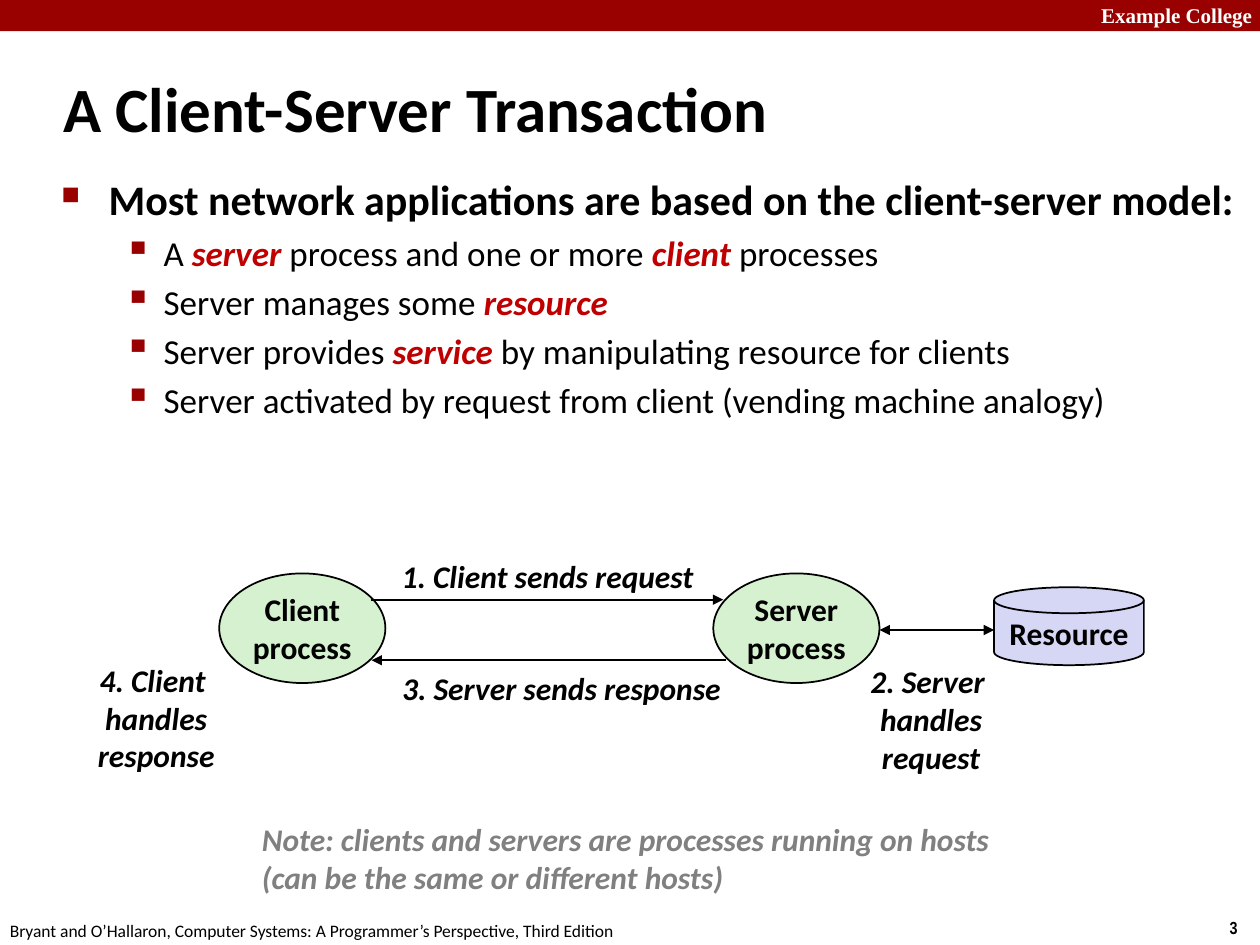
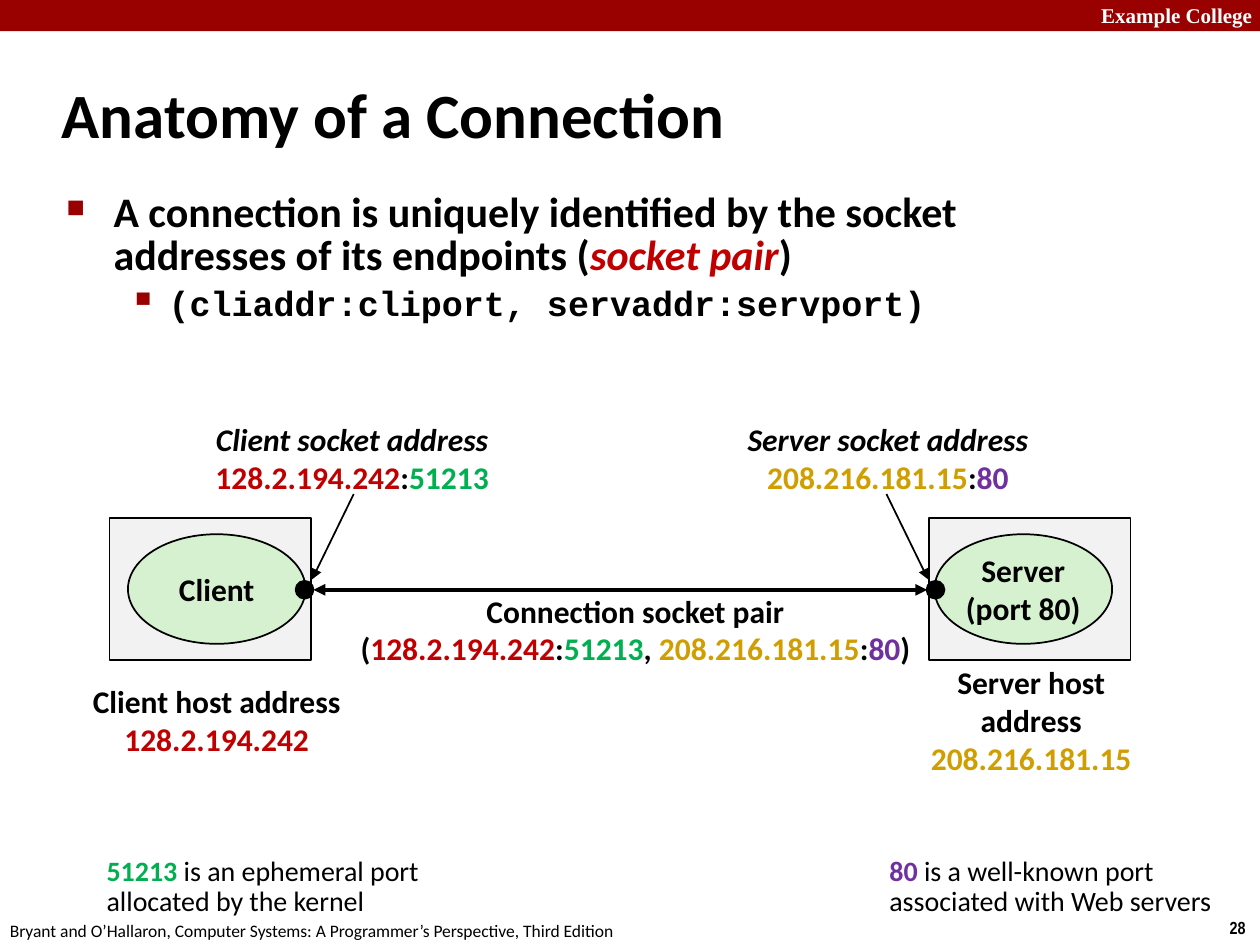
from dataclasses import dataclass

from lxml import etree
from pptx import Presentation
from pptx.dml.color import RGBColor
from pptx.enum.shapes import MSO_CONNECTOR, MSO_SHAPE
from pptx.enum.text import MSO_ANCHOR, PP_ALIGN
from pptx.oxml.ns import qn
from pptx.util import Cm, Pt

RECT, OVAL = MSO_SHAPE.RECTANGLE, MSO_SHAPE.OVAL
DISK = MSO_SHAPE.FLOWCHART_MAGNETIC_DISK
STRAIGHT = MSO_CONNECTOR.STRAIGHT
TOP, MIDDLE = MSO_ANCHOR.TOP, MSO_ANCHOR.MIDDLE
LEFT, CENTER = PP_ALIGN.LEFT, PP_ALIGN.CENTER
TITLE_ONLY = 5


@dataclass(frozen=True)
class Theme:
    band: str = "990000"
    ink: str = "000000"
    paper: str = "FFFFFF"
    accent: str = "C00000"
    note: str = "808080"
    process: str = "D5F1CF"
    resource: str = "D6D6F5"
    host: str = "F2F2F2"
    client_port: str = "00B050"
    server_ip: str = "D09E00"
    server_port: str = "7030A0"
    font: str = "Calibri"
    code_font: str = "Courier New"
    band_font: str = "Times New Roman"
    number_font: str = "Arial Narrow"
    title: int = 36
    point: int = 24
    subpoint: int = 20
    label: int = 18
    remark: int = 16
    band_size: int = 12
    footer: int = 10


T = Theme()
FOOTER = ("Bryant and O’Hallaron, Computer Systems: "
          "A Programmer’s Perspective, Third Edition")
# Bullet levels: character, size in percent, left margin, hanging indent, type size
BULLETS = (("■", 60, 0.95, 0.95, T.point), ("▪", 110, 2.06, 0.8, T.subpoint))

CLIENT_IP = ("128.2.194.242", {"color": T.accent})
CLIENT_PORT = ("51213", {"color": T.client_port})
SERVER_IP = ("208.216.181.15", {"color": T.server_ip})
SERVER_PORT = ("80", {"color": T.server_port})
CLIENT_SOCKET = [CLIENT_IP, ":", CLIENT_PORT]
SERVER_SOCKET = [SERVER_IP, ":", SERVER_PORT]


def cm(*lengths):
    return [Cm(v) for v in lengths]


def rgb(color):
    return RGBColor.from_string(color)


def key(text):
    """Run spec for an emphasised term."""
    return text, {"color": T.accent, "bold": True, "italic": True}


def add_runs(p, runs, **base):
    """Add runs to p; a run is a string or (string, style overrides)."""
    for run in [runs] if isinstance(runs, str) else runs:
        text, own = (run, {}) if isinstance(run, str) else run
        style = {"font": T.font, "size": T.label, "color": T.ink,
                 "bold": False, "italic": False, **base, **own}
        r = p.add_run()
        r.text = text
        r.font.name = style["font"]
        r.font.size = Pt(style["size"])
        r.font.bold = style["bold"]
        r.font.italic = style["italic"]
        r.font.color.rgb = rgb(style["color"])


def write(tf, paragraphs, align=LEFT, anchor=TOP, wrap=False, spacing=None, **style):
    tf.word_wrap = wrap
    tf.vertical_anchor = anchor
    for i, runs in enumerate(paragraphs):
        p = tf.add_paragraph() if i else tf.paragraphs[0]
        p.alignment = align
        if spacing:
            p.line_spacing = spacing
        add_runs(p, runs, **style)


def add_text(s, at, paragraphs, **style):
    write(s.shapes.add_textbox(*cm(*at)).text_frame, paragraphs, **style)


def add_label(s, at, paragraphs, **style):
    add_text(s, at, paragraphs, align=CENTER, anchor=MIDDLE, bold=True, **style)


def add_block(s, kind, at, fill, lines=(), outline=True):
    sp = s.shapes.add_shape(kind, *cm(*at))
    sp.shadow.inherit = False
    sp.fill.solid()
    sp.fill.fore_color.rgb = rgb(fill)
    if outline:
        sp.line.color.rgb = rgb(T.ink)
        sp.line.width = Pt(1)
    else:
        sp.line.fill.background()
    if lines:
        write(sp.text_frame, lines, align=CENTER, anchor=MIDDLE, bold=True)


def add_arrow(s, start, end, width=1, double=False):
    c = s.shapes.add_connector(STRAIGHT, *cm(*start, *end))
    c.line.color.rgb = rgb(T.ink)
    c.line.width = Pt(width)
    ln = c.line._get_or_add_ln()
    for tag in ("a:headEnd", "a:tailEnd") if double else ("a:tailEnd",):
        etree.SubElement(ln, qn(tag), type="triangle")
    etree.SubElement(c._element.spPr, qn("a:effectLst"))


def add_bullet(p, level):
    char, percent, margin, hanging, size = BULLETS[level]
    p.level = level
    p.space_before = Pt(round(size * 0.2))
    pPr = p._p.get_or_add_pPr()
    pPr.set("marL", str(Cm(margin)))
    pPr.set("indent", str(-Cm(hanging)))
    color = etree.SubElement(pPr, qn("a:buClr"))
    etree.SubElement(color, qn("a:srgbClr"), val=T.band)
    etree.SubElement(pPr, qn("a:buSzPct"), val=str(percent * 1000))
    etree.SubElement(pPr, qn("a:buChar"), char=char)


def add_bullets(s, at, items):
    """Add a bulleted body; an item is (level, line spacing, runs, style)."""
    tf = s.shapes.add_textbox(*cm(*at)).text_frame
    tf.word_wrap = True
    for i, (level, spacing, runs, style) in enumerate(items):
        p = tf.add_paragraph() if i else tf.paragraphs[0]
        p.line_spacing = spacing
        add_bullet(p, level)
        add_runs(p, runs, size=BULLETS[level][-1], **style)


def add_slide(prs, title, title_at, number):
    """Start a slide with its title, top band, footer and page number."""
    s = prs.slides.add_slide(prs.slide_layouts[TITLE_ONLY])
    add_block(s, RECT, (0, 0, 25.4, 0.63), T.band, outline=False)
    add_text(s, (21.95, -0.08, 3.63, 0.76), ["Example College"], wrap=True,
             font=T.band_font, size=T.band_size, color=T.paper, bold=True)
    add_text(s, (24.54, 18.36, 0.86, 0.69), [number],
             font=T.number_font, size=T.footer, bold=True)
    add_text(s, (-0.05, 18.42, 12.9, 0.69), [FOOTER], size=T.footer)
    ph = s.shapes.title
    ph.left, ph.top, ph.width, ph.height = cm(*title_at)
    write(ph.text_frame, [title], anchor=MIDDLE, wrap=True, size=T.title, bold=True)
    return s


def build_transaction(prs):
    s = add_slide(prs, "A Client-Server Transaction", (1.02, 1.37, 19.89, 1.6), "3")
    details = (
        ["A ", key("server"), " process and one or more ", key("client "), "processes"],
        ["Server manages some ", key("resource")],
        ["Server provides ", key("service"), " by manipulating resource for clients"],
        "Server activated by request from client (vending machine analogy)",
    )
    add_bullets(s, (0.99, 3.38, 24.18, 5.72), [
        (0, 1.0, "Most network applications are based on the client-server model:",
         {"bold": True}),
        *((1, 1.0, runs, {}) for runs in details),
    ])

    for x, role in ((4.42, "Client"), (14.38, "Server")):
        add_block(s, OVAL, (x, 11.56, 3.35, 2.21), T.process, [role, "process"])
    add_block(s, DISK, (20.04, 11.84, 3.02, 1.57), T.resource, ["Resource"])

    add_arrow(s, (7.47, 12.09), (14.58, 12.09))
    add_arrow(s, (14.63, 13.31), (7.49, 13.31))
    add_arrow(s, (17.73, 12.7), (20.04, 12.7), double=True)

    steps = (
        ((7.8, 11.1, 6.48, 1.02), ["1. Client sends request"]),
        ((17.27, 13.21, 3, 2.57), ["2. Server ", "handles", "request"]),
        ((7.8, 13.36, 7.04, 1.02), ["3. Server sends response"]),
        ((1.7, 13.18, 2.9, 2.57), ["4. Client ", "handles", "response"]),
    )
    for at, lines in steps:
        add_label(s, at, lines, italic=True)

    add_text(s, (5.03, 16.41, 15.52, 1.8),
             ["Note: clients and servers are processes running on hosts",
              "(can be the same or different hosts)"],
             color=T.note, bold=True, italic=True)


def add_endpoint(s, side, role, lines, ip, socket, host_x):
    """Draw one host; side is -1 left of the axis of symmetry, 1 right of it."""
    def x(distance):
        return 12.5 + side * distance

    add_block(s, RECT, (x(8.26) - 2.03, 10.44, 4.06, 2.87), T.host)
    add_block(s, OVAL, (x(8.13) - 1.79, 10.77, 3.58, 2.21), T.process, lines)
    add_block(s, OVAL, (x(6.36) - 0.18, 11.71, 0.36, 0.36), T.ink)
    add_label(s, (x(5.4) - 3.6, 8.33, 7.2, 1.8),
              [[(f"{role} socket address", {"italic": True})], socket])
    add_arrow(s, (x(5.37), 9.96), (x(6.21), 11.68))
    add_label(s, (host_x - 2.8, 13.61, 5.6, 1.8), [f"{role} host address", [ip]])


def build_connection(prs):
    s = add_slide(prs, "Anatomy of a Connection", (0.99, 1.22, 21.08, 2.11), "28")
    add_bullets(s, (1.09, 3.78, 21.95, 3.2), [
        (0, 0.85, ["A connection is uniquely identified by the socket addresses "
                   "of its endpoints (", key("socket pair"), ")"], {"bold": True}),
        (1, 0.9, "(cliaddr:cliport, servaddr:servport)",
         {"font": T.code_font, "bold": True}),
    ])

    add_endpoint(s, -1, "Client", ["Client"], CLIENT_IP, CLIENT_SOCKET, 4.37)
    add_endpoint(s, 1, "Server", ["Server", "(port 80)"], SERVER_IP, SERVER_SOCKET, 20.79)
    add_arrow(s, (6.32, 11.89), (18.69, 11.89), width=2.25, double=True)
    add_label(s, (6.96, 11.79, 11.7, 1.8),
              ["Connection socket pair",
               ["(", *CLIENT_SOCKET, ", ", *SERVER_SOCKET, ")"]])

    remarks = (
        (1.9, "51213 ", T.client_port, "is an ephemeral port", "allocated by the kernel"),
        (17.68, "80 ", T.server_port, "is a well-known port",
         "associated with Web servers"),
    )
    for x, port, color, first, second in remarks:
        add_text(s, (x, 17.15, 7.1, 1.5),
                 [[(port, {"color": color, "bold": True}), first], second],
                 spacing=0.9, size=T.remark)


def main():
    prs = Presentation()
    prs.slide_width, prs.slide_height = cm(25.4, 19.05)
    build_transaction(prs)
    build_connection(prs)
    prs.save("out.pptx")


if __name__ == "__main__":
    main()
